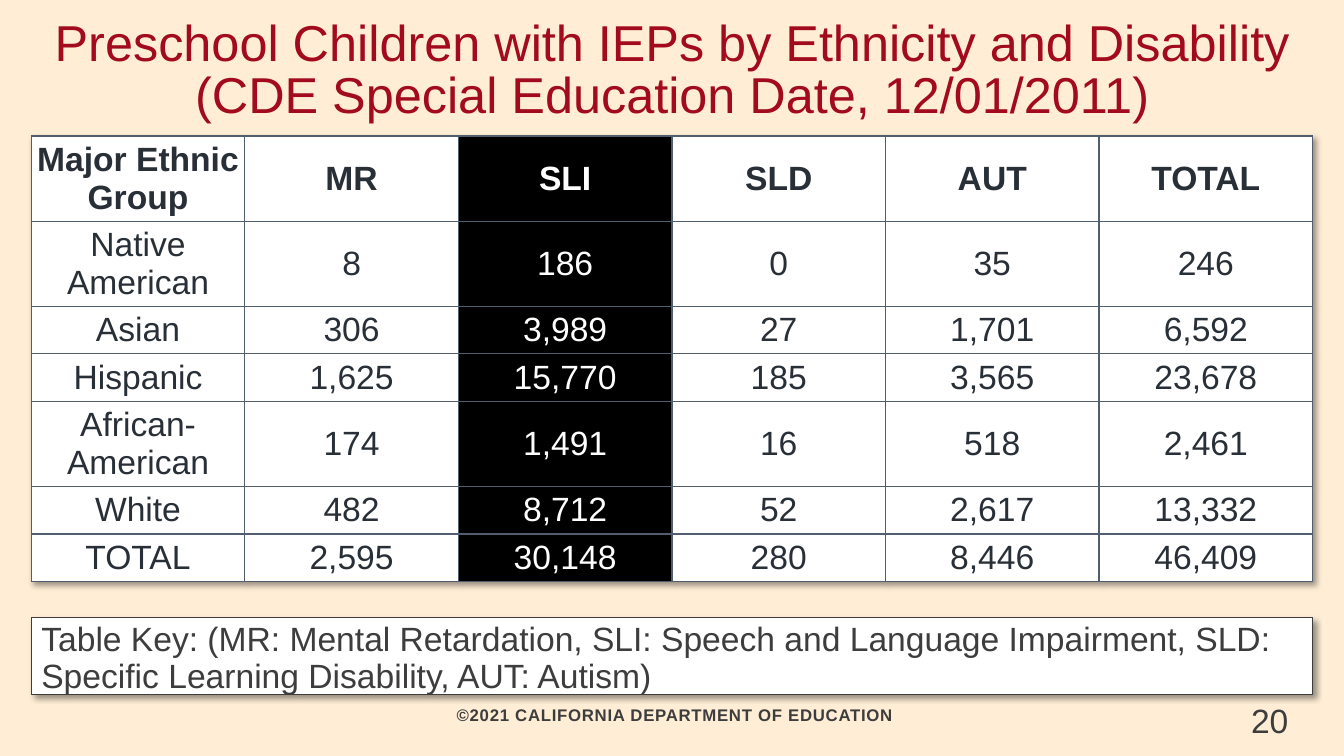
from dataclasses import dataclass
from typing import Any

from lxml import etree
from pptx import Presentation
from pptx.dml.color import RGBColor
from pptx.enum.text import MSO_ANCHOR, MSO_AUTO_SIZE, PP_ALIGN
from pptx.oxml import parse_xml
from pptx.oxml.ns import nsdecls, qn
from pptx.util import Inches, Pt

CENTER, LEFT = PP_ALIGN.CENTER, PP_ALIGN.LEFT
MIDDLE, TOP = MSO_ANCHOR.MIDDLE, MSO_ANCHOR.TOP
NO_AUTOFIT = MSO_AUTO_SIZE.NONE

CREAM = RGBColor(0xFF, 0xEE, 0xD5)
CRIMSON = RGBColor(0xA2, 0x0B, 0x1D)
CHARCOAL = RGBColor(0x3D, 0x3D, 0x3D)
SLATE = RGBColor(0x28, 0x2F, 0x37)
BORDER = RGBColor(0x51, 0x5E, 0x6E)
WHITE = RGBColor(0xFF, 0xFF, 0xFF)
BLACK = RGBColor(0x00, 0x00, 0x00)

FONT_NAME = "Arial"
ROW_HEIGHT = 0.41
CELL_MARGIN = 0.05
HIGHLIGHT_COLUMN = 2

ETHNICITY_ROWS = [
    ("Major Ethnic Group", "MR", "SLI", "SLD", "AUT", "TOTAL"),
    ("Native American", "8", "186", "0", "35", "246"),
    ("Asian", "306", "3,989", "27", "1,701", "6,592"),
    ("Hispanic", "1,625", "15,770", "185", "3,565", "23,678"),
    ("African-American", "174", "1,491", "16", "518", "2,461"),
    ("White", "482", "8,712", "52", "2,617", "13,332"),
    ("TOTAL", "2,595", "30,148", "280", "8,446", "46,409"),
]


@dataclass(frozen=True)
class Box:
    left: float
    top: float
    width: float
    height: float

    def lengths(self) -> tuple:
        return tuple(Inches(v) for v in (self.left, self.top, self.width, self.height))


@dataclass(frozen=True)
class TextStyle:
    size: float
    color: RGBColor
    bold: bool = False
    align: PP_ALIGN = LEFT
    anchor: MSO_ANCHOR = TOP
    line_spacing: float = 1.0
    space_after: float = 0


TITLE_BOX = Box(0.31, 0, 12.72, 1.43)
TABLE_BOX = Box(0.31, 1.35, 12.71, 4.7)
KEY_BOX = Box(0.31, 6.13, 12.71, 0.76)
FOOTER_BOX = Box(1.03, 6.96, 11.28, 0.29)
NUMBER_BOX = Box(12.31, 6.89, 1.03, 0.47)

TITLE_STYLE = TextStyle(36, CRIMSON, align=CENTER, anchor=MIDDLE, line_spacing=0.85)
KEY_STYLE = TextStyle(24, CHARCOAL, line_spacing=0.9, space_after=5)
FOOTER_STYLE = TextStyle(12, CHARCOAL, bold=True, align=CENTER, anchor=MIDDLE, line_spacing=0.95)
NUMBER_STYLE = TextStyle(24, CHARCOAL)


def apply_format(target: Any, values: dict) -> None:
    for name, value in values.items():
        setattr(target, name, value)


def write_text(text_frame: Any, text: str, style: TextStyle) -> Any:
    paragraph = text_frame.paragraphs[0]
    run = paragraph.add_run()
    run.text = text
    apply_format(paragraph, {
        "alignment": style.align,
        "line_spacing": style.line_spacing,
        "space_before": Pt(0),
        "space_after": Pt(style.space_after),
    })
    apply_format(run.font, {"name": FONT_NAME, "size": Pt(style.size), "bold": style.bold})
    run.font.color.rgb = style.color
    return paragraph


def fill_box(shape: Any, box: Box, text: str, style: TextStyle) -> Any:
    left, top, width, height = box.lengths()
    apply_format(shape, {"left": left, "top": top, "width": width, "height": height})
    apply_format(shape.text_frame, {
        "word_wrap": True,
        "auto_size": NO_AUTOFIT,
        "vertical_anchor": style.anchor,
    })
    return write_text(shape.text_frame, text, style)


def add_label(slide: Any, box: Box, text: str, style: TextStyle) -> Any:
    return fill_box(slide.shapes.add_textbox(*box.lengths()), box, text, style)


def set_indent(paragraph: Any, margin: float, indent: float) -> Any:
    properties = paragraph._p.get_or_add_pPr()
    properties.set("marL", str(Inches(margin)))
    properties.set("indent", str(Inches(indent)))
    return properties


def soft_shadow() -> Any:
    return parse_xml(
        f'<a:effectLst {nsdecls("a")}><a:outerShdw blurRad="{Pt(4)}" dist="{Pt(3)}" '
        f'dir="2700000" algn="tl" rotWithShape="0"><a:srgbClr val="{BLACK}">'
        '<a:alpha val="40000"/></a:srgbClr></a:outerShdw></a:effectLst>'
    )


def add_borders(cell: Any) -> None:
    properties = cell._tc.get_or_add_tcPr()
    for side in ("lnL", "lnR", "lnT", "lnB"):
        line = etree.SubElement(properties, qn(f"a:{side}"), w=str(Pt(1)))
        fill = etree.SubElement(line, qn("a:solidFill"))
        etree.SubElement(fill, qn("a:srgbClr"), val=str(BORDER))


def format_cell(cell: Any, text: str, header: bool, highlighted: bool) -> None:
    margin = Inches(CELL_MARGIN)
    apply_format(cell, {
        "vertical_anchor": MIDDLE,
        "margin_left": margin,
        "margin_right": margin,
        "margin_top": margin,
        "margin_bottom": margin,
    })
    add_borders(cell)
    cell.fill.solid()
    cell.fill.fore_color.rgb = BLACK if highlighted else WHITE
    color = WHITE if highlighted else SLATE
    write_text(cell.text_frame, text, TextStyle(24, color, bold=header, align=CENTER))


def add_ethnicity_table(slide: Any) -> None:
    frame = slide.shapes.add_table(
        len(ETHNICITY_ROWS), len(ETHNICITY_ROWS[0]), *TABLE_BOX.lengths()
    )
    table = frame.table
    apply_format(table, {"first_row": False, "horz_banding": False})
    table._tbl.tblPr.insert(0, soft_shadow())
    for row_index, values in enumerate(ETHNICITY_ROWS):
        table.rows[row_index].height = Inches(ROW_HEIGHT)
        for column_index, text in enumerate(values):
            format_cell(table.cell(row_index, column_index), text,
                        row_index == 0, column_index == HIGHLIGHT_COLUMN)
    frame.height = Inches(TABLE_BOX.height)


def add_table_key(placeholder: Any) -> None:
    paragraph = fill_box(
        placeholder, KEY_BOX,
        "Table Key: (MR: Mental Retardation, SLI: Speech and Language Impairment, "
        "SLD: Specific Learning Disability, AUT: Autism)", KEY_STYLE)
    etree.SubElement(set_indent(paragraph, 0, 0), qn("a:buNone"))
    placeholder.fill.solid()
    placeholder.fill.fore_color.rgb = WHITE
    placeholder.line.color.rgb = CHARCOAL
    placeholder.line.width = Pt(0.75)
    placeholder._element.spPr.append(soft_shadow())


def main() -> None:
    presentation = Presentation()
    presentation.slide_width = Inches(13.33)
    presentation.slide_height = Inches(7.5)
    slide = presentation.slides.add_slide(presentation.slide_layouts[1])
    slide.background.fill.solid()
    slide.background.fill.fore_color.rgb = CREAM

    # Footer
    footer = add_label(slide, FOOTER_BOX, "©2021 CALIFORNIA DEPARTMENT OF EDUCATION", FOOTER_STYLE)
    set_indent(footer, 0.5, -0.45)
    footer.runs[0].font._element.set("spc", "50")

    # Title, table and key
    fill_box(slide.shapes.title, TITLE_BOX,
             "Preschool Children with IEPs by Ethnicity and Disability "
             "(CDE Special Education Date, 12/01/2011)", TITLE_STYLE)
    add_ethnicity_table(slide)
    add_table_key(slide.placeholders[1])

    # Slide number
    add_label(slide, NUMBER_BOX, "20", NUMBER_STYLE)
    presentation.save("out.pptx")


if __name__ == "__main__":
    main()
